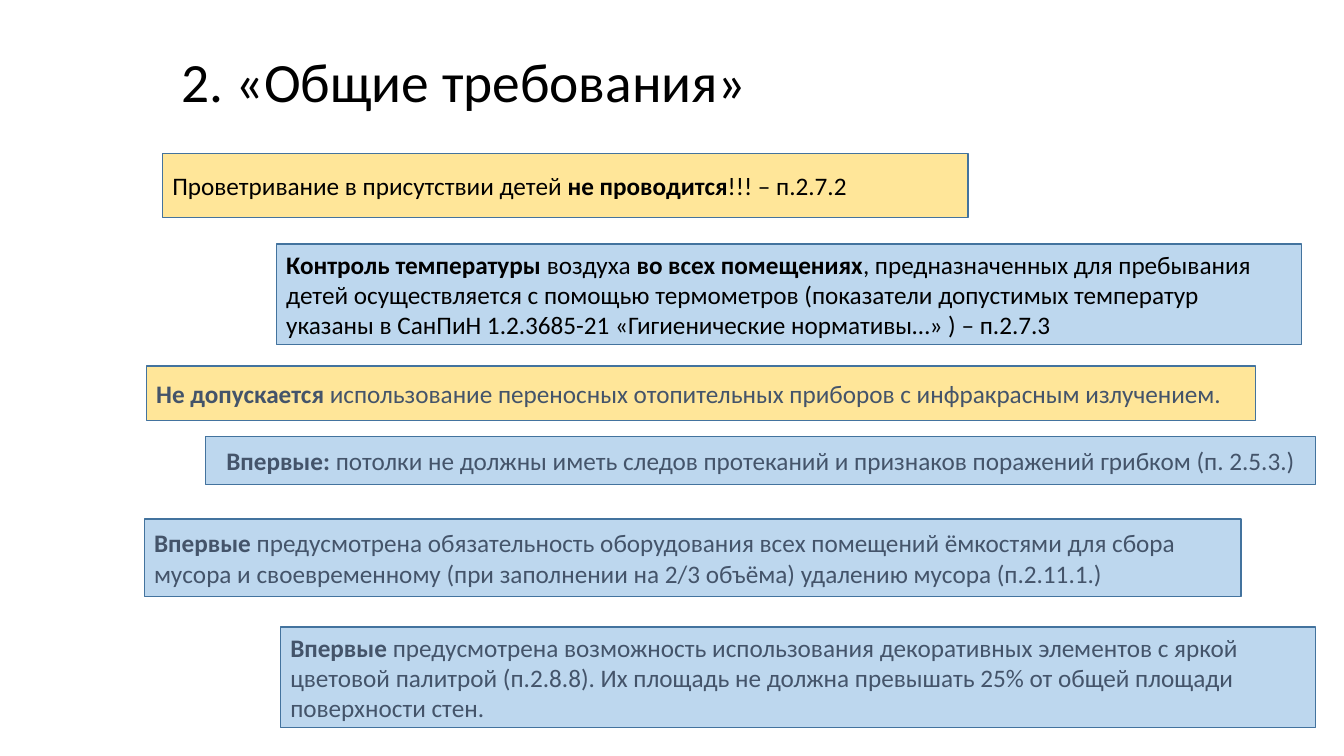
from pptx import Presentation
from pptx import util as u
from pptx.dml.color import RGBColor
from pptx.enum import shapes, text

SLIDE_WIDTH, SLIDE_HEIGHT = u.Inches(13.33), u.Inches(7.5)
YELLOW, BLUE, BORDER = "FFE699", "BDD7EE", "43739E"
BLACK, SLATE = "000000", "44546A"
LEFT, CENTER = text.PP_ALIGN.LEFT, text.PP_ALIGN.CENTER

TITLE = "2. «Общие требования»"
TITLE_BOX = (12.75, 6.27, 82.2, 9.87)

# Box as left, top, width, height in percent of the slide; *asterisks* mark bold words.
REQUIREMENTS = [
    ((12.08, 20.27, 59.94, 8.53), YELLOW, BLACK, LEFT,
     "Проветривание в присутствии детей *не проводится*!!! – п.2.7.2"),
    ((20.56, 32.27, 76.29, 13.33), BLUE, BLACK, LEFT,
     "*Контроль температуры *воздуха *во всех помещениях*, предназначенных для "
     "пребывания детей осуществляется с помощью термометров (показатели допустимых "
     "температур указаны в СанПиН 1.2.3685-21 «Гигиенические нормативы…» ) – п.2.7.3"),
    ((10.88, 48.4, 82.52, 7.2), YELLOW, SLATE, LEFT,
     "*Не допускается *использование переносных отопительных приборов "
     "с инфракрасным излучением."),
    ((15.3, 57.73, 82.6, 6.4), BLUE, SLATE, CENTER,
     "*Впервые:* потолки не должны иметь следов протеканий и признаков "
     "поражений грибком (п. 2.5.3.)"),
    ((10.73, 68.67, 81.62, 10.27), BLUE, SLATE, LEFT,
     "*Впервые* предусмотрена обязательность оборудования всех помещений ёмкостями "
     "для сбора мусора и своевременному (при заполнении на 2/3 объёма) удалению "
     "мусора (п.2.11.1.)"),
    ((20.86, 82.93, 77.04, 13.33), BLUE, SLATE, LEFT,
     "*Впервые* предусмотрена возможность использования декоративных элементов с яркой "
     "цветовой палитрой (п.2.8.8). Их площадь не должна превышать 25% от общей площади "
     "поверхности стен."),
]


def color(hex_value):
    return RGBColor.from_string(hex_value)


def place(box):
    """Turn percentages of the slide into lengths."""
    sides = (SLIDE_WIDTH, SLIDE_HEIGHT) * 2
    return [round(side * share / 100) for side, share in zip(sides, box)]


def set_all(target, formats):
    for name, value in formats.items():
        setattr(target, name, value)


def write(shape, content, size, font_color, alignment=LEFT, line_spacing=1.0):
    """Fill a shape with one paragraph, making every second *-separated part bold."""
    set_all(shape.text_frame, {"word_wrap": True,
                               "vertical_anchor": text.MSO_ANCHOR.MIDDLE})
    paragraph = shape.text_frame.paragraphs[0]
    set_all(paragraph, {"alignment": alignment, "line_spacing": line_spacing})
    for index, part in enumerate(content.split("*")):
        if part:
            run = paragraph.add_run()
            run.text = part
            set_all(run.font, {"name": "Calibri", "size": u.Pt(size),
                               "bold": index % 2 == 1})
            run.font.color.rgb = color(font_color)


def add_title(slide, box):
    shape = slide.shapes.add_textbox(*place(box))
    write(shape, TITLE, 39.6, BLACK, line_spacing=0.9)


def add_requirement(slide, box, fill, font_color, alignment, content):
    shape = slide.shapes.add_shape(shapes.MSO_SHAPE.RECTANGLE, *place(box))
    shape.shadow.inherit = False
    shape.fill.solid()
    shape.fill.fore_color.rgb = color(fill)
    shape.line.color.rgb = color(BORDER)
    shape.line.width = u.Pt(1)
    write(shape, content, 18, font_color, alignment)


def main():
    presentation = Presentation()
    set_all(presentation, {"slide_width": SLIDE_WIDTH, "slide_height": SLIDE_HEIGHT})
    slide = presentation.slides.add_slide(presentation.slide_layouts[6])
    add_title(slide, TITLE_BOX)
    for requirement in REQUIREMENTS:
        add_requirement(slide, *requirement)
    presentation.save("out.pptx")


if __name__ == "__main__":
    main()
